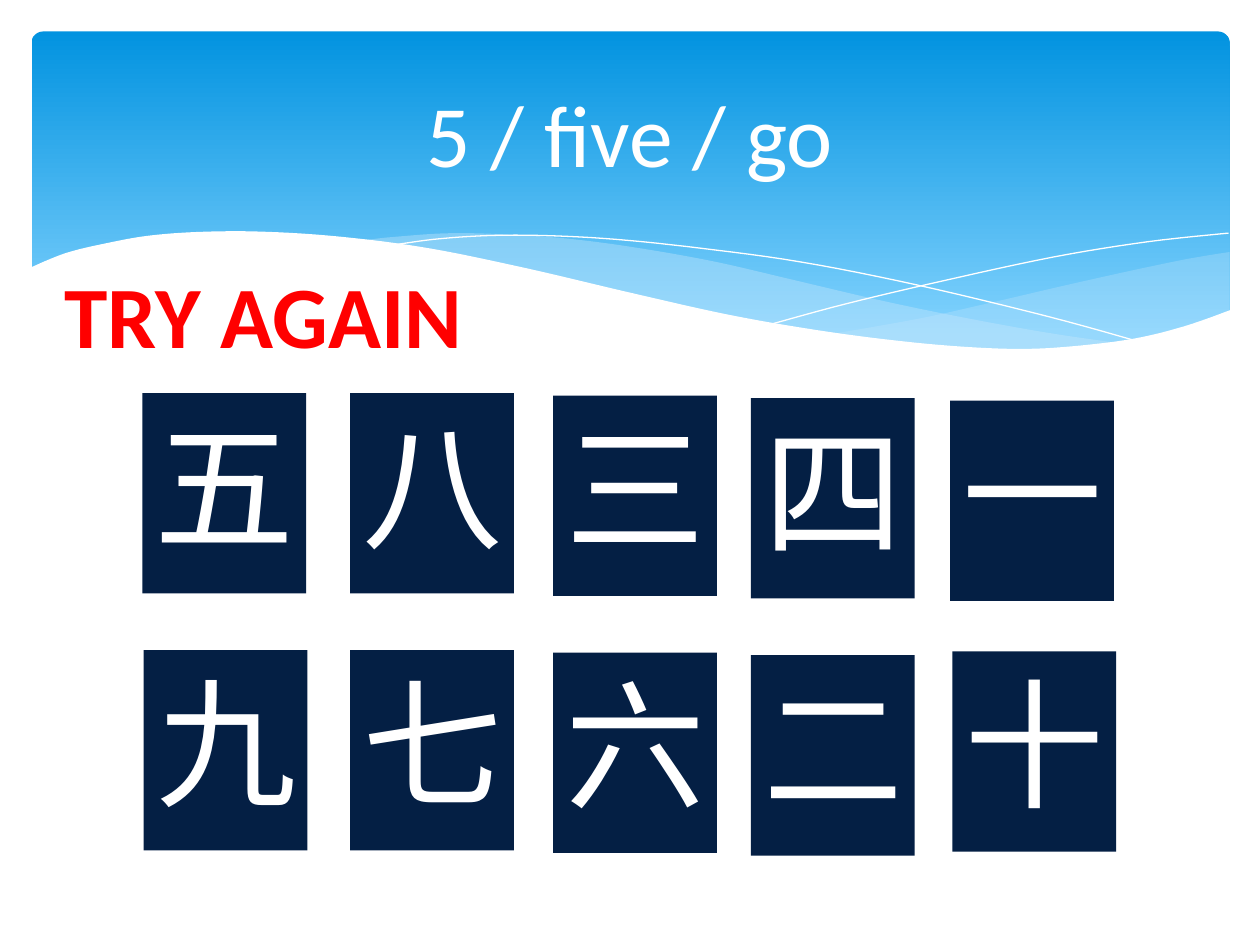
from lxml import etree
from pptx import Presentation
from pptx import util as u
from pptx.dml.color import RGBColor
from pptx.enum import shapes, text
from pptx.oxml.ns import qn

WHITE = RGBColor(0xFF, 0xFF, 0xFF)
RED = RGBColor(0xFF, 0x00, 0x00)
NAVY = RGBColor(0x04, 0x1F, 0x44)
SKY_TOP = RGBColor(0x02, 0x93, 0xE0)
SKY_BOTTOM = RGBColor(0x83, 0xD3, 0xFE)
MIST = RGBColor(0xC6, 0xE7, 0xFC)

prs = Presentation()
prs.slide_width, prs.slide_height = u.Inches(10), u.Inches(7.5)
CELL = prs.slide_width // 100  # square grid: 100 columns by 75 rows
s = prs.slides.add_slide(prs.slide_layouts[6])


def add_text(sp, words, size, color, bold=False, align=text.PP_ALIGN.CENTER,
             anchor=text.MSO_ANCHOR.TOP):
    tf = sp.text_frame
    tf.word_wrap = True
    tf.vertical_anchor = anchor
    p = tf.paragraphs[0]
    p.alignment = align
    r = p.add_run()
    r.text = words
    r.font.name, r.font.size, r.font.bold = "Calibri", u.Pt(size), bold
    r.font.color.rgb = color


def add_wave(*curves, fill=None, alpha=100, steps=6):
    """Join smooth curves through grid points; with no fill, draw a white hairline."""
    points = []
    for curve in curves:
        padded = [curve[0], *curve, curve[-1]]
        for a, b, c, d in zip(padded, padded[1:], padded[2:], padded[3:]):
            for t in (i / steps for i in range(steps)):
                points.append([
                    CELL * (k + t * (m - j) / 2
                            + t ** 2 * (2 * j - 5 * k + 4 * m - n) / 2
                            + t ** 3 * (3 * k - j - 3 * m + n) / 2)
                    for j, k, m, n in zip(a, b, c, d)])
        points.append([CELL * v for v in curve[-1]])
    builder = s.shapes.build_freeform(*points[0])
    builder.add_line_segments(points[1:], close=fill is not None)
    sp = builder.convert_to_shape()
    sp.shadow.inherit = False
    if fill is None:
        sp.fill.background()
        sp.line.color.rgb = WHITE
        sp.line.width = u.Pt(0)
        return
    sp.fill.solid()
    sp.fill.fore_color.rgb = fill
    sp.line.fill.background()
    if alpha < 100:
        color = sp._element.spPr.find(qn("a:solidFill"))[0]
        etree.SubElement(color, qn("a:alpha"), val=str(alpha * 1000))


# Sky banner
sp = s.shapes.add_shape(shapes.MSO_SHAPE.ROUNDED_RECTANGLE,
                        *(int(v * CELL) for v in (2.5, 2.5, 95.1, 27)))
sp.adjustments[0] = 0.034
sp.shadow.inherit = False
sp.line.fill.background()
sp.fill.gradient()
sp.fill.gradient_angle = 270
for stop, position, color in zip(sp.fill.gradient_stops, (0, 0.9), (SKY_TOP, SKY_BOTTOM)):
    stop.position = position
    stop.color.rgb = color

# Translucent waves
add_wave([(97.6, 20), (93.5, 20.7), (86.1, 22.3), (77.9, 24.2), (72.9, 25.3), (66.1, 26.5)],
         [(66.1, 26.5), (71.9, 27.2), (76.9, 27.7), (81.4, 27.8), (86.3, 27.5),
          (90.5, 26.9), (94.2, 25.9), (97.6, 24.7)],
         fill=MIST, alpha=29)
add_wave([(89.3, 27.3), (83.7, 26.5), (77.5, 25.4), (70.6, 24), (62.9, 22.2), (56.9, 20.8),
          (51.4, 19.8), (46.5, 19.1), (42, 18.7), (36.1, 18.5), (31.3, 18.8), (28.6, 19.1)],
         [(28.6, 19.1), (34.2, 19.9), (40.4, 21.1), (49.1, 23.2), (56.6, 24.8), (63.4, 26.1),
          (69.5, 27), (74.8, 27.6), (79.6, 27.8), (84.8, 27.7), (89.3, 27.3)],
         fill=MIST, alpha=40)

# Hairlines
add_wave([(30.9, 19.5), (34.4, 19), (38.7, 18.7), (43.3, 18.7), (48.9, 19), (55.6, 19.7),
          (63.6, 20.8), (72.7, 22.6), (83.1, 25.1), (90.7, 27.2)])
add_wave([(61.3, 25.7), (67.2, 24.1), (74.8, 22.3), (83.6, 20.4), (91, 19.2), (97.5, 18.5)])

# White foreground wave
add_wave([(97.7, 24.6), (94, 25.9), (89.9, 26.9), (85, 27.5), (80.9, 27.7), (76.1, 27.5),
          (70.8, 27), (64.8, 26.2), (57.9, 25), (50.3, 23.3), (41.8, 21.3), (34, 19.7),
          (27.1, 18.8), (21.1, 18.4), (16.1, 18.4), (11.9, 18.7), (8.5, 19.3), (5.2, 20.1),
          (2.3, 21.3)],
         [(2.3, 32.9), (97.7, 32.9)], fill=WHITE)

# Title and verdict
for words, box, style in (
        ("5 / five / go", (5, 3.7, 90, 13.7),
         dict(color=WHITE, anchor=text.MSO_ANCHOR.MIDDLE)),
        ("TRY AGAIN", (2.8, 20.2, 36.2, 9.4), dict(color=RED, bold=True))):
    add_text(s.shapes.add_textbox(*(int(v * CELL) for v in box)), words, 50, **style)

# Number cards: each row lists its characters, left columns and top rows
CARD_W, CARD_H = 13, 15.9
for characters, lefts, tops in (
        ("五八三四一", (11.3, 27.8, 43.9, 59.6, 75.4), (31.2, 31.2, 31.4, 31.6, 31.8)),
        ("九七六二十", (11.4, 27.8, 43.9, 59.6, 75.6), (51.6, 51.6, 51.8, 52, 51.7))):
    for character, left, top in zip(characters, lefts, tops):
        sp = s.shapes.add_shape(shapes.MSO_SHAPE.RECTANGLE,
                                *(int(v * CELL) for v in (left, top, CARD_W, CARD_H)))
        sp.shadow.inherit = False
        sp.fill.solid()
        sp.fill.fore_color.rgb = NAVY
        sp.line.fill.background()
        add_text(sp, character, 80, WHITE, align=text.PP_ALIGN.LEFT)

prs.save("out.pptx")
